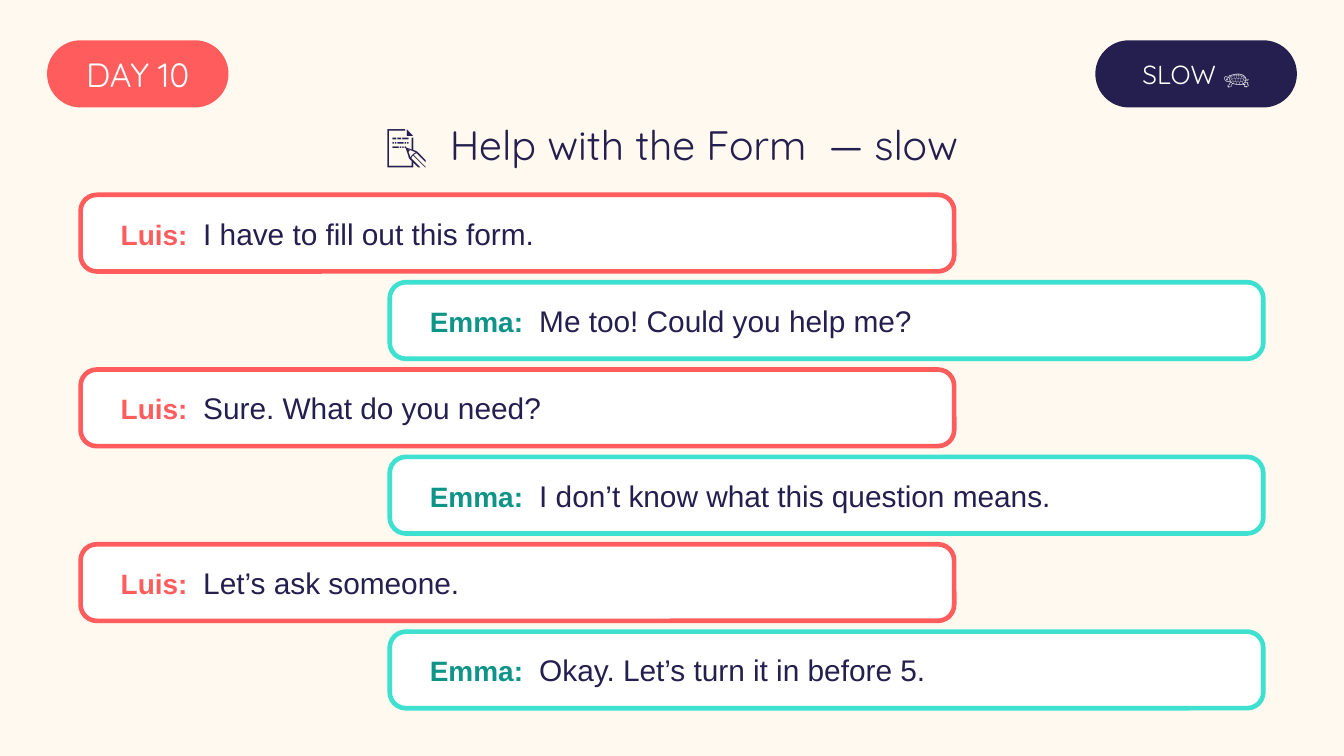
from dataclasses import dataclass

from lxml.etree import SubElement
from pptx import Presentation
from pptx.dml.color import RGBColor
from pptx.enum.shapes import MSO_SHAPE
from pptx.enum.text import MSO_ANCHOR, PP_ALIGN
from pptx.oxml.ns import qn
from pptx.util import Pt

COLORS = {
    "cream": "FFF9EF",
    "coral": "FF5D5D",
    "navy": "241F4E",
    "turquoise": "3EE0CF",
    "teal": "0E9488",
    "white": "FFFFFF",
}
HEADING_FONT = "Quicksand"
BODY_FONT = "Arial"
BUBBLE_W, BUBBLE_H = 468, 41.04
BUBBLE_TOP, BUBBLE_STEP = 104.4, 46.8


@dataclass(frozen=True)
class Badge:
    text: str
    left: float
    width: float
    fill: str
    size: float


@dataclass(frozen=True)
class Speaker:
    name: str
    left: float
    border: str
    color: str
    tab: float


LUIS = Speaker("Luis:", 43.2, "coral", "coral", 44.2)
EMMA = Speaker("Emma:", 208.8, "turquoise", "teal", 58.6)

BADGES = [
    Badge("DAY 10", 25.2, 97.2, "coral", 18),
    Badge("SLOW 🐢", 586.8, 108, "navy", 14),
]
DIALOGUE = [
    (LUIS, "I have to fill out this form."),
    (EMMA, "Me too! Could you help me?"),
    (LUIS, "Sure. What do you need?"),
    (EMMA, "I don’t know what this question means."),
    (LUIS, "Let’s ask someone."),
    (EMMA, "Okay. Let’s turn it in before 5."),
]


def rgb(name: str) -> RGBColor:
    return RGBColor.from_string(COLORS[name])


def style_font(font, name: str, size: float, color: str, bold: bool = False) -> None:
    font.name = name
    font.size = Pt(size)
    font.bold = bold
    font.color.rgb = rgb(color)


def add_round_rect(slide, left: float, top: float, width: float, height: float,
                   radius: float, fill: str):
    sp = slide.shapes.add_shape(MSO_SHAPE.ROUNDED_RECTANGLE,
                                Pt(left), Pt(top), Pt(width), Pt(height))
    sp.adjustments[0] = radius
    sp.shadow.inherit = False
    sp.fill.solid()
    sp.fill.fore_color.rgb = rgb(fill)
    sp.line.fill.background()
    sp.text_frame.vertical_anchor = MSO_ANCHOR.MIDDLE
    sp.text_frame.word_wrap = True
    return sp


def add_title(slide, text: str) -> None:
    sp = slide.shapes.title
    sp.left, sp.top, sp.width, sp.height = Pt(0), Pt(59.04), Pt(720), Pt(36)
    tf = sp.text_frame
    tf.vertical_anchor = MSO_ANCHOR.MIDDLE
    p = tf.paragraphs[0]
    p.text = text
    p.alignment = PP_ALIGN.CENTER
    style_font(p.font, HEADING_FONT, 22, "navy")


def add_badge(slide, badge: Badge) -> None:
    sp = add_round_rect(slide, badge.left, 21.6, badge.width, 36, 0.5, badge.fill)
    tf = sp.text_frame
    tf.margin_left = tf.margin_right = tf.margin_top = tf.margin_bottom = 0
    p = tf.paragraphs[0]
    p.text = badge.text
    p.alignment = PP_ALIGN.CENTER
    style_font(p.font, HEADING_FONT, badge.size, "white")


def add_bubble(slide, top: float, speaker: Speaker, line: str) -> None:
    sp = add_round_rect(slide, speaker.left, top, BUBBLE_W, BUBBLE_H, 0.21, "white")
    sp.line.color.rgb = rgb(speaker.border)
    sp.line.width = Pt(2.5)
    tf = sp.text_frame
    tf.margin_left = tf.margin_right = Pt(19)
    p = tf.paragraphs[0]
    p.alignment = PP_ALIGN.LEFT
    tabs = SubElement(p._p.get_or_add_pPr(), qn("a:tabLst"))
    SubElement(tabs, qn("a:tab"), pos=str(Pt(speaker.tab)), algn="l")
    r = p.add_run()
    r.text = f"{speaker.name}\t"
    style_font(r.font, BODY_FONT, 15, speaker.color, bold=True)
    r = p.add_run()
    r.text = line
    style_font(r.font, BODY_FONT, 16, "navy")


def main() -> None:
    prs = Presentation()
    prs.slide_width, prs.slide_height = Pt(720), Pt(405)
    slide = prs.slides.add_slide(prs.slide_layouts[5])
    slide.background.fill.solid()
    slide.background.fill.fore_color.rgb = rgb("cream")

    add_title(slide, "📝  Help with the Form  — slow")
    for badge in BADGES:
        add_badge(slide, badge)
    for i, (speaker, line) in enumerate(DIALOGUE):
        add_bubble(slide, BUBBLE_TOP + i * BUBBLE_STEP, speaker, line)

    prs.save("out.pptx")


if __name__ == "__main__":
    main()
